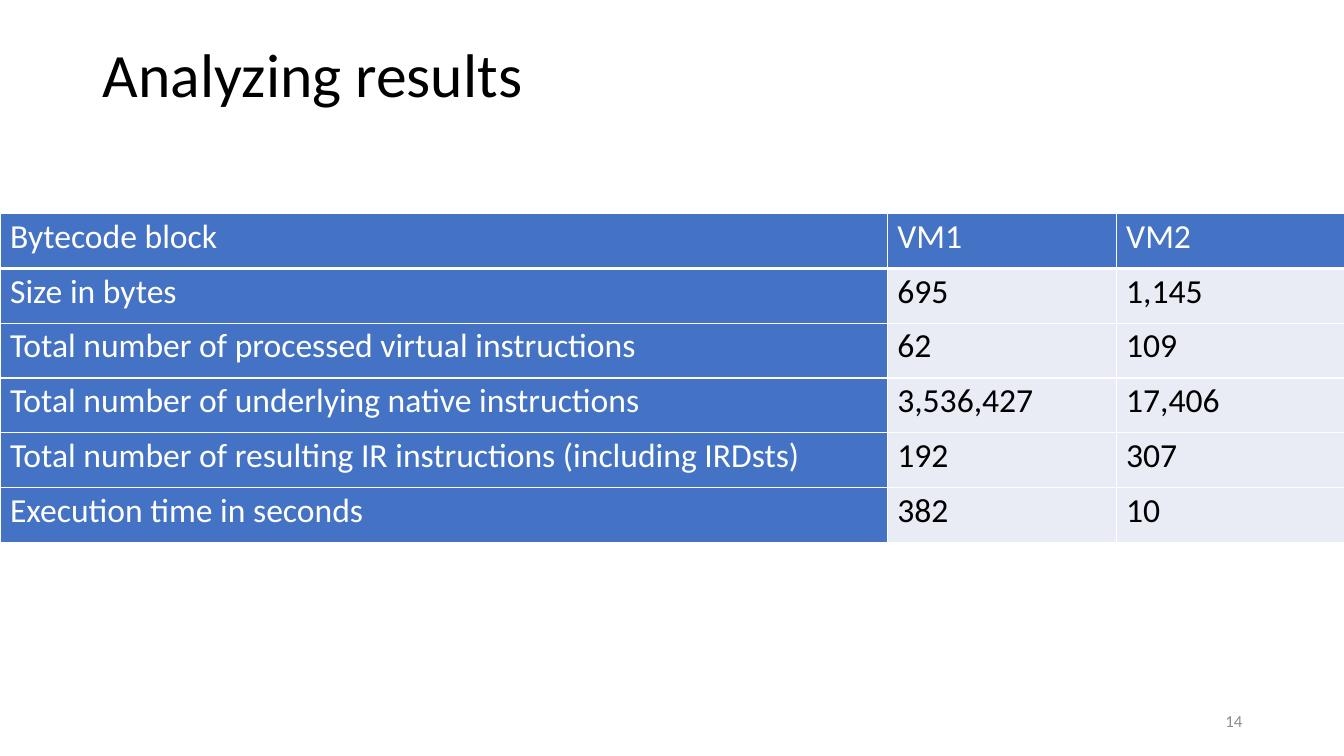
"""Builds the slide that compares two virtual machines in a table."""
from lxml import etree
from pptx import Presentation
from pptx import util as u
from pptx.dml.color import RGBColor
from pptx.enum import text
from pptx.oxml.ns import qn

EMU_PER_PX = 9144
FONT = "Calibri"
COLORS = {
    "black": "000000",
    "white": "FFFFFF",
    "header": "4472C4",
    "band": "E9EBF5",
    "number": "8C8C8C",
}
COLUMN_WIDTHS = (880, 227, 227)
RESULTS = (
    ("Bytecode block", "VM1", "VM2"),
    ("Size in bytes", "695", "1,145"),
    ("Total number of processed virtual instructions", "62", "109"),
    ("Total number of underlying native instructions", "3,536,427", "17,406"),
    ("Total number of resulting IR instructions (including IRDsts)", "192", "307"),
    ("Execution time in seconds", "382", "10"),
)


def px(length):
    """Turn px into EMU."""
    return u.Emu(length * EMU_PER_PX)


def place(box, left, top, width, height):
    """Move and size a shape."""
    box.left, box.top, box.width, box.height = map(px, (left, top, width, height))


def write(frame, words, size, color, spacing=None, align=text.PP_ALIGN.LEFT):
    """Set one paragraph of text and format it."""
    frame.text = words
    para = frame.paragraphs[0]
    para.alignment = align
    para.line_spacing = spacing
    font = para.runs[0].font
    font.name = FONT
    font.size = u.Pt(size)
    font.bold = False
    font.color.rgb = RGBColor.from_string(COLORS[color])


def add_border(cell, side, points):
    """Draw a white line on one side of a cell."""
    line = etree.Element(qn(f"a:ln{side}"), w=str(u.Pt(points)))
    fill = etree.SubElement(line, qn("a:solidFill"))
    etree.SubElement(fill, qn("a:srgbClr"), val=COLORS["white"])
    cell._tc.get_or_add_tcPr().append(line)


def format_cell(cell, words, is_header, is_label):
    """Fill a table cell, with its text and borders."""
    dark = is_header or is_label
    cell.margin_left = cell.margin_right = px(10)
    cell.margin_top = cell.margin_bottom = 0
    cell.vertical_anchor = text.MSO_ANCHOR.TOP
    write(cell.text_frame, words, 24, "white" if dark else "black", 1.07)
    for side in "LRTB":
        add_border(cell, side, 3 if is_header and side == "B" else 1)
    cell.fill.solid()
    cell.fill.fore_color.rgb = RGBColor.from_string(COLORS["header" if dark else "band"])


def add_results(page):
    """Add the table of results."""
    table = page.shapes.add_table(
        len(RESULTS), len(COLUMN_WIDTHS), px(0), px(212), px(sum(COLUMN_WIDTHS)), px(326)
    ).table
    table.horz_banding = False
    table.first_col = True
    for column, width in zip(table.columns, COLUMN_WIDTHS):
        column.width = px(width)
    for row, values in enumerate(RESULTS):
        for column, words in enumerate(values):
            format_cell(table.cell(row, column), words, row == 0, column == 0)


def add_title(page, words):
    """Place and format the title."""
    title = page.shapes.title
    place(title, 92, 40, 1150, 73)
    title.text_frame.vertical_anchor = text.MSO_ANCHOR.MIDDLE
    write(title.text_frame, words, 44, "black", 0.9)


def add_page_number(page, words):
    """Add the page number at the lower right."""
    box = page.shapes.add_textbox(px(942), px(695), px(300), px(40))
    box.text_frame.word_wrap = True
    box.text_frame.vertical_anchor = text.MSO_ANCHOR.MIDDLE
    write(box.text_frame, words, 12, "number", align=text.PP_ALIGN.RIGHT)


def main():
    """Build and save the deck."""
    deck = Presentation()
    deck.slide_width, deck.slide_height = px(1333), px(750)
    page = deck.slides.add_slide(deck.slide_layouts[5])
    add_title(page, "Analyzing results")
    add_results(page)
    add_page_number(page, "14")
    deck.save("out.pptx")


if __name__ == "__main__":
    main()
